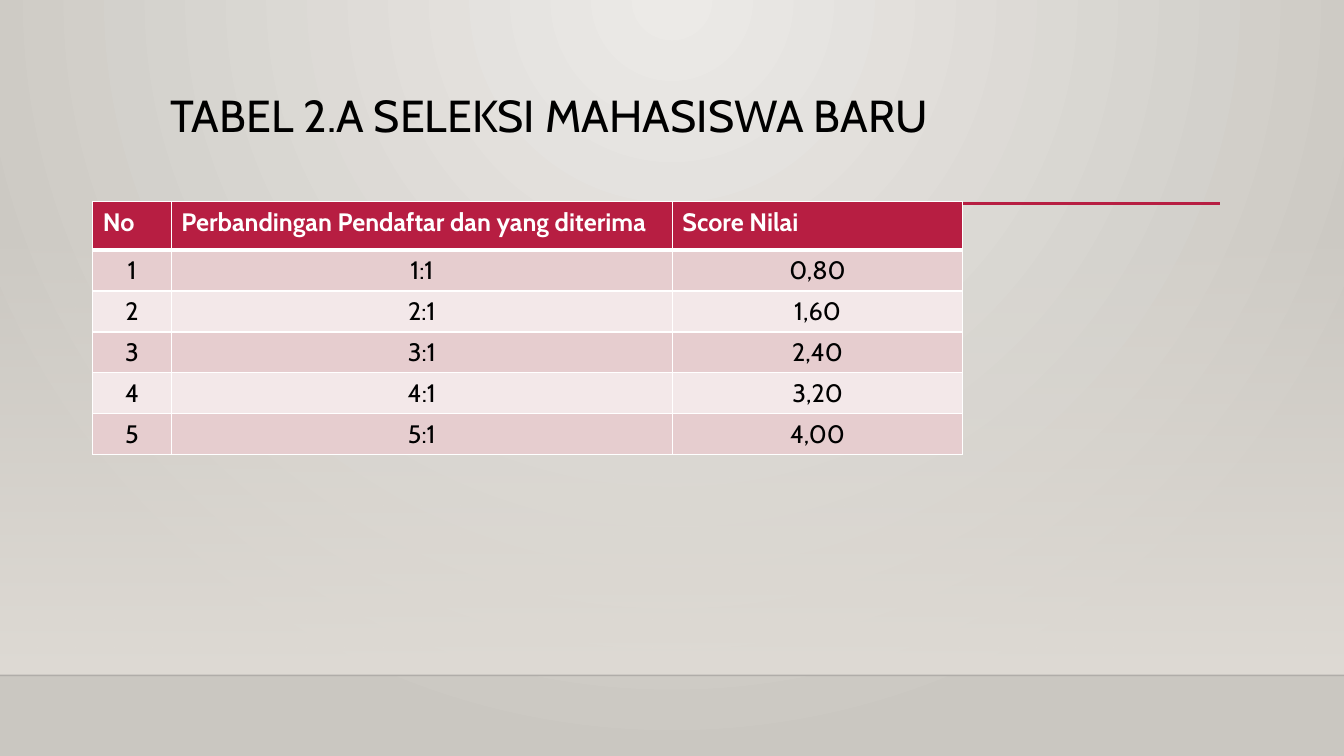
from lxml.etree import SubElement
from pptx import Presentation
from pptx.dml.color import RGBColor
from pptx.enum.shapes import MSO_CONNECTOR as Connector, MSO_SHAPE as Shape
from pptx.enum.text import MSO_ANCHOR as Anchor, MSO_AUTO_SIZE as AutoSize, PP_ALIGN as Align
from pptx.oxml.ns import qn
from pptx.util import Inches, Pt

WIDTH, HEIGHT = Inches(13.33), Inches(7.5)
FONT = "Cabin"
RED, WHITE, BLACK = "B71E42", "FFFFFF", "000000"
BANDS = ("E6CDCF", "F3E8E9")
COLUMN_SHARES = (5.85, 37.28, 21.61)
HEADER_SHARE, ROW_SHARE = 6.4, 5.42
HEADERS = ("No", "Perbandingan Pendaftar dan yang diterima", "Score Nilai")
SCORES = ("0,80", "1,60", "2,40", "3,20", "4,00")


def across(share):
    """Percent of the slide's width."""
    return round(WIDTH * share / 100)


def down(share):
    """Percent of the slide's height."""
    return round(HEIGHT * share / 100)


def color(code):
    return RGBColor.from_string(code)


def add_alpha(color_element, percent):
    SubElement(color_element, qn("a:alpha"), val=str(percent * 1000))


def set_gradient(holder, stops):
    """Replace the solid fill in holder by stops of (position, colour, opacity)."""
    solid = holder.find(qn("a:solidFill"))
    gradient = SubElement(holder, qn("a:gradFill"), rotWithShape="1")
    holder.replace(solid, gradient)
    stop_list = SubElement(gradient, qn("a:gsLst"))
    for position, code, opacity in stops:
        stop = SubElement(stop_list, qn("a:gs"), pos=str(position * 1000))
        add_alpha(SubElement(stop, qn("a:srgbClr"), val=code), opacity)
    return gradient


def style_text(frame, size, code, bold=False, align=None):
    for para in frame.paragraphs:
        para.alignment = align
        for span in para.runs:
            span.font.name = FONT
            span.font.size = Pt(size)
            span.font.bold = bold
            span.font.color.rgb = color(code)


def paint_background(page):
    page.background.fill.solid()
    holder = page.element.find(".//" + qn("p:bgPr"))
    gradient = set_gradient(holder, [(0, "ECEAE7", 100), (100, "CAC7C1", 100)])
    circle = SubElement(gradient, qn("a:path"), path="circle")
    SubElement(circle, qn("a:fillToRect"), l="43000", t="0", r="43000", b="100000")


def add_haze(page):
    haze = page.shapes.add_shape(Shape.RECTANGLE, 0, down(29.47), WIDTH, down(59.87))
    haze.shadow.inherit = False
    haze.line.fill.background()
    haze.fill.solid()
    gradient = set_gradient(haze.element.spPr, [(0, "DFDBD5", 0), (100, "DFDBD5", 100)])
    SubElement(gradient, qn("a:lin"), ang="5400000", scaled="0")


def add_rule(page, left, right, top, code, weight, opacity=100):
    rule = page.shapes.add_connector(
        Connector.STRAIGHT, across(left), down(top), across(right), down(top))
    rule.line.color.rgb = color(code)
    rule.line.width = Pt(weight)
    add_alpha(rule.element.find(".//" + qn("a:srgbClr")), opacity)
    SubElement(rule.element.spPr, qn("a:effectLst"))
    return rule


def fill_title(page, text):
    title = page.shapes.title
    title.left, title.top = across(11.93), down(11.73)
    title.width, title.height = across(78.77), down(15.33)
    frame = title.text_frame
    frame.text = text
    frame.word_wrap = True
    frame.auto_size = AutoSize.NONE
    frame.vertical_anchor = Anchor.TOP
    frame.paragraphs[0].line_spacing = 0.9
    style_text(frame, 32, BLACK, align=Align.LEFT)
    return title


def set_borders(cell, top, bottom):
    """White edges; top and bottom are weights in points."""
    properties = cell._tc.get_or_add_tcPr()
    for side, weight in (("L", 1), ("R", 1), ("T", top), ("B", bottom)):
        edge = SubElement(properties, qn("a:ln" + side), w=str(Pt(weight)))
        SubElement(SubElement(edge, qn("a:solidFill")), qn("a:srgbClr"), val=WHITE)


def add_score_table(page):
    rows = [HEADERS]
    rows += [(str(n), f"{n}:1", score) for n, score in enumerate(SCORES, 1)]
    heights = [HEADER_SHARE] + [ROW_SHARE] * len(SCORES)
    table = page.shapes.add_table(
        len(rows), len(HEADERS), across(6.9), down(26.67),
        across(sum(COLUMN_SHARES)), down(sum(heights))).table
    table.horz_banding = False
    for column, share in zip(table.columns, COLUMN_SHARES):
        column.width = across(share)
    for index, (row, texts) in enumerate(zip(table.rows, rows)):
        row.height = down(heights[index])
        header = index == 0
        for cell, text in zip(row.cells, texts):
            cell.text = text
            set_borders(cell, top=3 if index == 1 else 1, bottom=3 if header else 1)
            cell.fill.solid()
            cell.fill.fore_color.rgb = color(RED if header else BANDS[(index - 1) % 2])
            style_text(cell.text_frame, 18, WHITE if header else BLACK, header,
                       Align.LEFT if header else Align.CENTER)


def main():
    deck = Presentation()
    deck.slide_width, deck.slide_height = WIDTH, HEIGHT
    page = deck.slides.add_slide(deck.slide_layouts[5])

    # Backdrop
    paint_background(page)
    add_haze(page)
    add_rule(page, 0, 100, 89.33, "000001", 1, opacity=20)
    title_rule = add_rule(page, 11.93, 90.77, 26.93, RED, 2.5)

    # Title, in front of the backdrop
    title = fill_title(page, "TABEL 2.A SELEKSI MAHASISWA BARU")
    title_rule.element.addnext(title.element)

    # Table
    add_score_table(page)
    deck.save("out.pptx")


if __name__ == "__main__":
    main()
